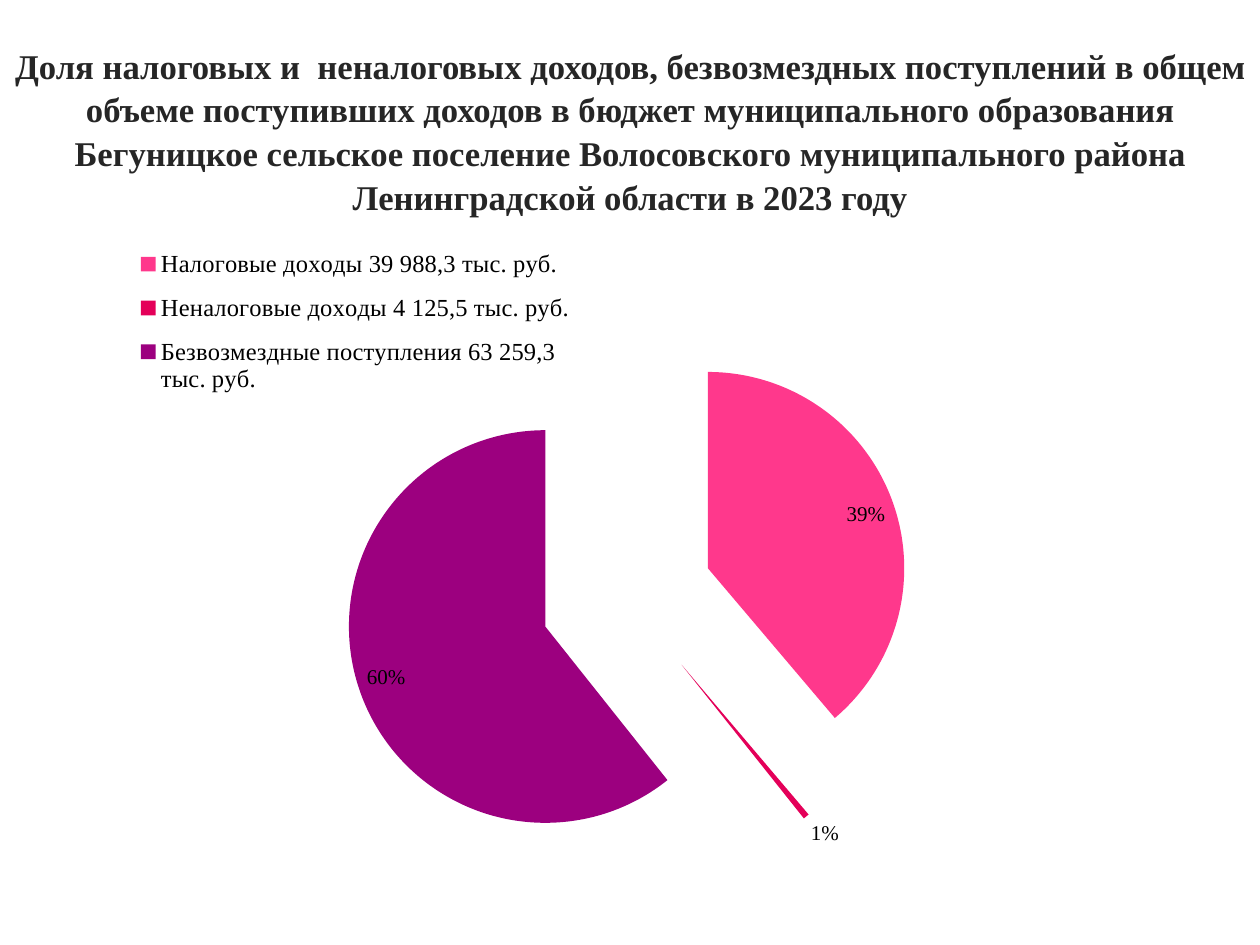
import pptx
import pptx.util
import pptx.chart.data
import pptx.enum.chart
import pptx.enum.text
import pptx.dml.color
import pptx.oxml

HUES = {"ink": "262626", "text": "000000", "tax": "FF388C",
        "other": "E40059", "grant": "9C007F"}
FACE = "Times New Roman"
SCALE = 914400 // 126
SPOT = pptx.enum.chart.XL_LABEL_POSITION


class Deck:
    def __init__(self):
        self.file = pptx.Presentation()
        self.file.slide_width = self.px(1260)
        self.file.slide_height = self.px(945)
        self.page = self.file.slides.add_slide(self.file.slide_layouts[6])

    def px(self, size):
        return pptx.util.Emu(round(size * SCALE))

    def hue(self, name):
        return pptx.dml.color.RGBColor.from_string(HUES[name])

    def style(self, font, size, color, bold=False, face=FACE):
        font.name = face
        font.size = pptx.util.Pt(size)
        font.bold = bold
        font.color.rgb = self.hue(color)

    def title(self, text, *box):
        frame = self.page.shapes.add_textbox(*map(self.px, box)).text_frame
        frame.word_wrap = True
        frame.vertical_anchor = pptx.enum.text.MSO_ANCHOR.BOTTOM
        frame.margin_left = frame.margin_right = frame.margin_bottom = 0
        frame.text = text
        line = frame.paragraphs[0]
        line.alignment = pptx.enum.text.PP_ALIGN.CENTER
        line.line_spacing = 1.05
        self.style(line.runs[0].font, 19.8, "ink", True)

    def place(self, node, x, y, w, h, inner=False):
        for old in node.findall(pptx.oxml.ns.qn("c:layout")):
            node.remove(old)
        target = '<c:layoutTarget val="inner"/>' if inner else ""
        sizes = "".join(f'<c:{tag} val="{val}"/>'
                        for tag, val in zip("xywh", (x, y, w, h)))
        return pptx.oxml.parse_xml(
            f'<c:layout {pptx.oxml.ns.nsdecls("c")}><c:manualLayout>{target}'
            '<c:xMode val="edge"/><c:yMode val="edge"/>'
            f'{sizes}</c:manualLayout></c:layout>')

    def pie(self, parts, *box):
        data = pptx.chart.data.CategoryChartData(number_format="#,##0.0")
        data.categories = [part[0] for part in parts]
        data.add_series("Series 1", [part[1] for part in parts])
        kind = pptx.enum.chart.XL_CHART_TYPE.PIE
        chart = self.page.shapes.add_chart(
            kind, *map(self.px, box), data).chart
        self.style(chart.font, 10, "text", face="Vollkorn")
        chart.has_title = False
        chart.has_legend = True
        key = chart.legend
        key.position = pptx.enum.chart.XL_LEGEND_POSITION.TOP
        key.include_in_layout = False
        self.style(key.font, 14, "text")
        pos = key._element.find(pptx.oxml.ns.qn("c:legendPos"))
        pos.addnext(self.place(key._element, 0.05, 0.03, 0.38, 0.26))
        area = chart._chartSpace.chart.plotArea
        area.insert(0, self.place(area, 0.23, 0.15, 0.5, 0.84, True))

        plot = chart.plots[0]
        plot.vary_by_categories = True
        row = plot.series[0]
        tags = row.data_labels
        tags.show_percentage = True
        tags.show_value = False
        tags.number_format = "0%"
        tags.number_format_is_linked = False
        tags.position = SPOT.INSIDE_END
        self.style(tags.font, 12, "text")
        for i, (name, value, color, note, spot) in enumerate(parts):
            point = row.points[i]
            point.format.fill.solid()
            point.format.fill.fore_color.rgb = self.hue(color)
            point.format.line.fill.background()
            if note:
                tag = point.data_label
                tag.text_frame.text = note
                run = tag.text_frame.paragraphs[0].runs[0]
                self.style(run.font, 12, "text")
                tag.position = spot
        burst = pptx.oxml.parse_xml(
            f'<c:explosion {pptx.oxml.ns.nsdecls("c")} val="44"/>')
        row._element.find(pptx.oxml.ns.qn("c:dPt")).addprevious(burst)


def main():
    deck = Deck()
    deck.title(
        "Доля налоговых и  неналоговых доходов, безвозмездных поступлений "
        "в общем объеме поступивших доходов в бюджет муниципального "
        "образования Бегуницкое сельское поселение Волосовского "
        "муниципального района Ленинградской области в 2023 году",
        0, 20, 1260, 197)
    deck.pie([
        ("Налоговые доходы 39 988,3 тыс. руб.", 39, "tax", None, None),
        ("Неналоговые доходы 4 125,5 тыс. руб.", 0.5, "other", "1%",
         SPOT.OUTSIDE_END),
        ("Безвозмездные поступления 63 259,3 тыс. руб.", 61, "grant", "60%",
         SPOT.INSIDE_END),
    ], 84, 214, 1131, 674)
    deck.file.save("out.pptx")


if __name__ == "__main__":
    main()
